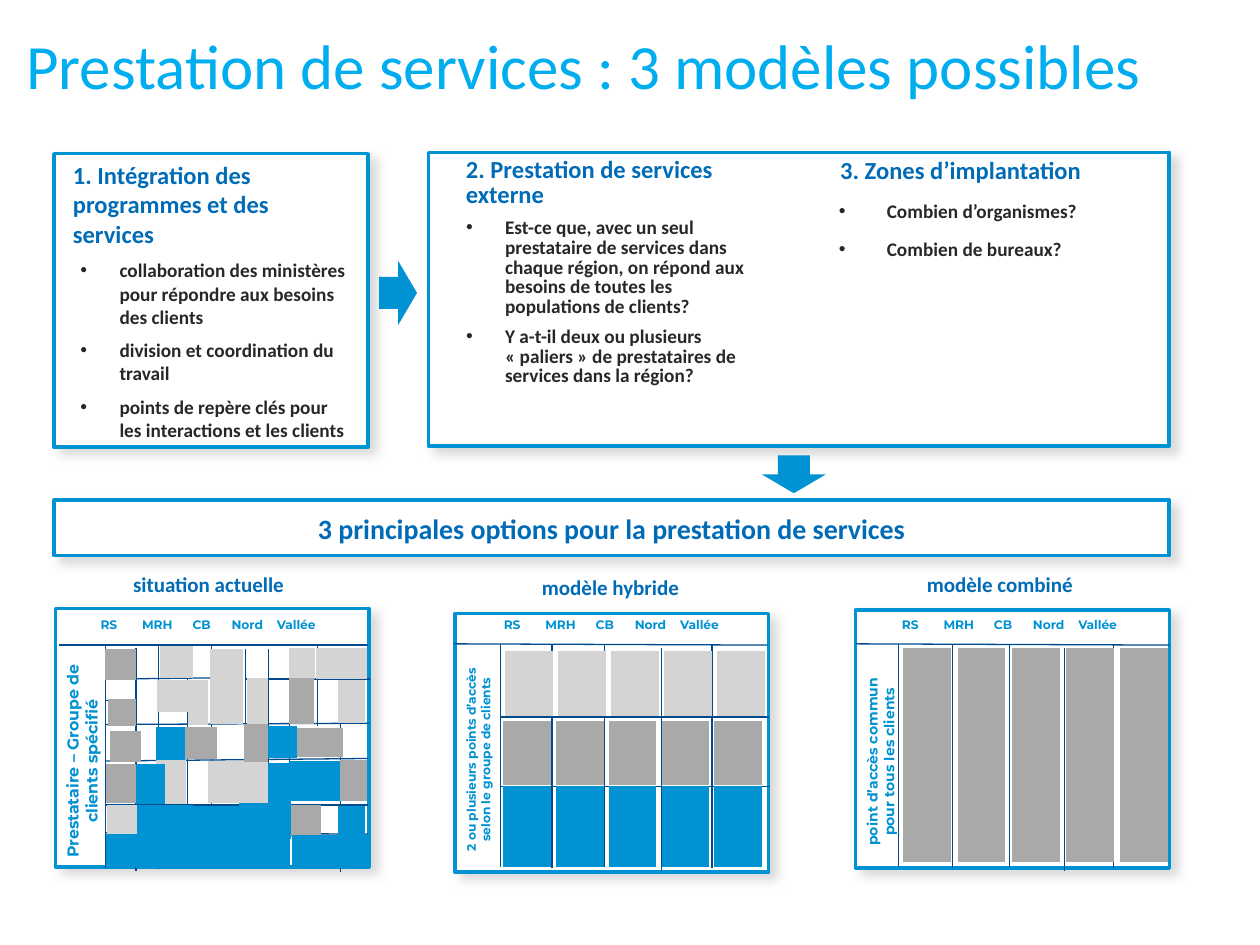
import pptx
import pptx.dml.color
import pptx.enum.shapes
import pptx.enum.text
import pptx.oxml
import pptx.oxml.ns
import pptx.util

PX = 9144
SKY = pptx.dml.color.RGBColor(0x00, 0xAE, 0xEF)
BLUE = pptx.dml.color.RGBColor(0x00, 0x92, 0xD2)
DARK_BLUE = pptx.dml.color.RGBColor(0x00, 0x6B, 0xB6)
NAVY = pptx.dml.color.RGBColor(0x00, 0x4B, 0x8E)
INK = pptx.dml.color.RGBColor(0x27, 0x27, 0x27)
GREY = pptx.dml.color.RGBColor(0xA9, 0xA9, 0xA9)
LIGHT = pptx.dml.color.RGBColor(0xD4, 0xD4, 0xD4)
WHITE = pptx.dml.color.RGBColor(0xFF, 0xFF, 0xFF)

SHAPES = pptx.enum.shapes.MSO_SHAPE
CENTER = pptx.enum.text.PP_ALIGN.CENTER
MIDDLE = pptx.enum.text.MSO_ANCHOR.MIDDLE
NAMESPACE = pptx.oxml.ns.nsdecls("a")
NO_BREAK = chr(160)
SHADOW = (
    f'<a:effectLst {NAMESPACE}><a:outerShdw blurRad="76200" dist="63500" dir="2280000" '
    'algn="tl" rotWithShape="0"><a:srgbClr val="D9D9D9"/></a:outerShdw></a:effectLst>'
)
BULLET = (f'<a:buFont {NAMESPACE} typeface="Arial"/>', f'<a:buChar {NAMESPACE} char="•"/>')
HEADING = {"size": 14, "bold": True, "color": DARK_BLUE}
BODY = {"size": 11, "bold": True, "color": INK}
CAPTION = {"size": 12, "bold": True, "color": DARK_BLUE}
REGIONS = {"RS": 27, "MRH": 60, "CB": 100, "Nord": 131, "Vallée": 167}

CURRENT_LINES = [
    (3, 29, 248, 29), (40, 92, 249, 91), (40, 156, 248, 156), (40, 56, 124, 55),
    (40, 73, 64, 73), (40, 121, 248, 119), (40, 178, 248, 179), (151, 56, 250, 56),
] + [(x, top, x, bottom) for x, top, bottom in (
    (40, 29, 206), (64, 31, 208), (82, 30, 207), (105, 28, 205), (124, 29, 206), (151, 32, 121),
    (169, 32, 205), (186, 32, 206), (208, 30, 93), (209, 155, 205), (226, 31, 209))]
CURRENT_CELLS = {
    LIGHT: [
        (41, 156, 26, 25), (123, 32, 26, 60), (121, 121, 48, 33), (224, 57, 22, 34),
        (83, 30, 26, 25), (105, 57, 16, 35), (207, 31, 21, 25), (152, 55, 17, 37),
        (81, 57, 26, 25), (80, 120, 24, 35), (185, 31, 21, 25), (226, 31, 21, 25)],
    GREY: [
        (42, 72, 22, 21), (40, 123, 26, 31), (186, 156, 25, 25), (103, 94, 25, 25),
        (39, 32, 25, 25), (150, 92, 19, 30), (185, 55, 20, 37), (43, 97, 25, 25),
        (190, 95, 38, 23), (226, 120, 21, 33)],
    BLUE: [(x, 180, 23, 26) for x in (64, 83, 105, 188, 208, 226)] + [
        (40, 179, 26, 26), (124, 180, 62, 26), (169, 93, 23, 26), (185, 121, 41, 32),
        (224, 157, 22, 23), (65, 156, 23, 26), (86, 156, 23, 26), (104, 157, 23, 26),
        (169, 123, 18, 60), (126, 157, 23, 26), (146, 154, 23, 26), (64, 123, 23, 32),
        (80, 94, 23, 26)],
}


def scaled(*lengths):
    """Turn px lengths into EMU."""
    return [length * PX for length in lengths]


def write(paragraph, text, size, color, bold=False, name="Calibri", **layout):
    """Put one formatted run in a paragraph."""
    for key, value in layout.items():
        setattr(paragraph, key, value)
    run = paragraph.add_run()
    run.text = text
    for key, value in {"size": pptx.util.Pt(size), "bold": bold, "name": name}.items():
        setattr(run.font, key, value)
    run.font.color.rgb = color


def indent(paragraph, margin, hanging=0):
    """Set the left margin and first-line indent of a paragraph."""
    properties = paragraph._p.get_or_add_pPr()
    for key, value in {"marL": margin, "indent": -hanging}.items():
        properties.set(key, str(value * PX))
    return properties


def add_text(slide, box):
    """Add a wrapping text box and return it."""
    shape = slide.shapes.add_textbox(*scaled(*box))
    shape.text_frame.word_wrap = True
    return shape


def add_block(slide, kind, box, fill):
    """Add a plain filled shape without outline."""
    shape = slide.shapes.add_shape(kind, *scaled(*box))
    shape.shadow.inherit = False
    shape.fill.solid()
    shape.fill.fore_color.rgb = fill
    shape.line.fill.background()
    return shape


def add_frame(slide, box):
    """Add a white rectangle with a blue outline and a soft shadow."""
    shape = add_block(slide, SHAPES.RECTANGLE, box, WHITE)
    shape.line.color.rgb = BLUE
    shape.line.width = pptx.util.Pt(2)
    properties = shape._element.spPr
    properties.remove(properties.find(pptx.oxml.ns.qn("a:effectLst")))
    properties.append(pptx.oxml.parse_xml(SHADOW))
    return shape


def add_rule(slide, left, top, start_x, start_y, end_x, end_y):
    """Draw a thin grid line relative to a corner."""
    ends = scaled(left + start_x, top + start_y, left + end_x, top + end_y)
    line = slide.shapes.add_connector(pptx.enum.shapes.MSO_CONNECTOR.STRAIGHT, *ends)
    line.line.color.rgb = NAVY
    line.line.width = pptx.util.Pt(0.75)
    line._element.spPr.append(pptx.oxml.parse_xml(f"<a:effectLst {NAMESPACE}/>"))


def add_title(slide, box, text):
    """Write the slide title."""
    write(add_text(slide, box).text_frame.paragraphs[0], text, 36, SKY)


def add_topic(slide, box, heading, bullets, margin, hanging, spacing=1.0, before=0):
    """Write a heading followed by bulleted questions or points."""
    frame = add_text(slide, box).text_frame
    layout = {"line_spacing": spacing, "space_after": pptx.util.Pt(6)}
    indent(frame.paragraphs[0], 1)
    write(frame.paragraphs[0], heading, **HEADING, **layout)
    for text in bullets:
        paragraph = frame.add_paragraph()
        properties = indent(paragraph, margin, hanging)
        for element in BULLET:
            properties.append(pptx.oxml.parse_xml(element))
        write(paragraph, text, **BODY, **layout, space_before=pptx.util.Pt(before))


def add_banner(slide, box, text):
    """Draw the framed line that introduces the options."""
    frame = add_frame(slide, box).text_frame
    frame.vertical_anchor = MIDDLE
    write(frame.paragraphs[0], text, 16, DARK_BLUE, bold=True, alignment=CENTER)


def add_model(slide, box, caption, caption_box, header_at, side, side_box, side_size, lines, cells):
    """Draw one service model: caption, frame, region labels, side label, grid and cells."""
    left, top = box[:2]

    def inside(x, y, *size):
        return (left + x, top + y, *size)

    add_frame(slide, box)
    label = add_text(slide, inside(*caption_box)).text_frame.paragraphs[0]
    write(label, caption, **CAPTION, alignment=CENTER)
    for line in lines:
        add_rule(slide, left, top, *line)
    header_x, header_y = header_at
    for region, offset in REGIONS.items():
        shape = add_text(slide, inside(header_x + offset, header_y, 60, 22))
        shape.text_frame.word_wrap = False
        write(shape.text_frame.paragraphs[0], region, 7, BLUE, bold=True, name="Montserrat")
    shape = add_text(slide, inside(*side_box))
    shape.rotation = 270
    for key in ("margin_left", "margin_right"):
        setattr(shape.text_frame, key, 8 * PX)
    write(shape.text_frame.paragraphs[0], side, side_size, BLUE, bold=True,
          name="Montserrat", alignment=CENTER)
    for color, places in cells.items():
        for place in places:
            add_block(slide, SHAPES.FLOWCHART_PROCESS, inside(*place), color)


def columns(*starts):
    """Give the vertical grid lines from their tops."""
    return [(x, top, x, top + 177) for x, top in starts]


def cell_row(start, step, top, height):
    """Give five equally spaced cells."""
    return [(start + step * index, top, 38, height) for index in range(5)]


def main():
    """Build the slide and save it."""
    presentation = pptx.Presentation()
    presentation.slide_width, presentation.slide_height = scaled(1000, 750)
    slide = presentation.slides.add_slide(presentation.slide_layouts[6])
    add_title(slide, (11, 16, 979, 125), f"Prestation de services{NO_BREAK}: 3 modèles possibles")
    add_frame(slide, (43, 122, 249, 233))
    add_frame(slide, (340, 121, 588, 233))
    add_topic(slide, (47, 122, 242, 223), "1. Intégration des programmes et des services", (
        "collaboration des ministères pour répondre aux besoins des clients",
        "division et coordination du travail",
        "points de repère clés pour les interactions et les clients"), 38, 31)
    add_topic(slide, (359, 121, 256, 223), "2. Prestation de services externe", (
        "Est-ce que, avec un seul prestataire de services dans chaque région, "
        "on répond aux besoins de toutes les populations de clients?",
        f"Y a-t-il deux ou plusieurs «{NO_BREAK}paliers{NO_BREAK}» de prestataires "
        "de services dans la région?"), 32, 31, 0.85)
    add_topic(slide, (656, 122, 240, 223), "3. Zones d’implantation", (
        "Combien d’organismes?", "Combien de bureaux?"), 38, 38, 0.85, 4.4)
    add_block(slide, SHAPES.RIGHT_ARROW, (301, 207, 30, 51), BLUE)
    add_banner(slide, (43, 397, 885, 44), "3 principales options pour la prestation de services")
    add_block(slide, SHAPES.RIGHT_ARROW, (615, 351, 30, 51), BLUE).rotation = 90
    add_model(slide, (44, 483, 249, 205), "situation actuelle", (49, -34, 145, 30), (-1, 2),
              "Prestataire – Groupe de clients spécifié", (-67, 101, 176, 40), 9,
              CURRENT_LINES, CURRENT_CELLS)
    add_model(slide, (361, 487, 249, 205), "modèle hybride", (51, -36, 145, 30), (2, -2),
              "2 ou plusieurs points d’accès selon le groupe de clients", (-69, 99, 176, 34), 7,
              [(-1, 24, 248, 25), (36, 82, 249, 82), (36, 137, 250, 137)]
              + columns((36, 24), (77, 25), (119, 24), (164, 27), (204, 25)),
              {BLUE: cell_row(38, 42, 137, 64), GREY: cell_row(38, 42, 85, 51),
               LIGHT: cell_row(40, 42, 30, 51)})
    add_model(slide, (679, 484, 249, 205), "modèle combiné", (42, -35, 145, 30), (0, 1),
              "point d’accès commun pour tous les clients", (-68, 102, 176, 37), 8,
              [(0, 27, 249, 28)]
              + columns((34, 27), (77, 28), (122, 27), (166, 30), (205, 28)),
              {GREY: cell_row(38, 43, 30, 170)})
    presentation.save("out.pptx")


if __name__ == "__main__":
    main()
